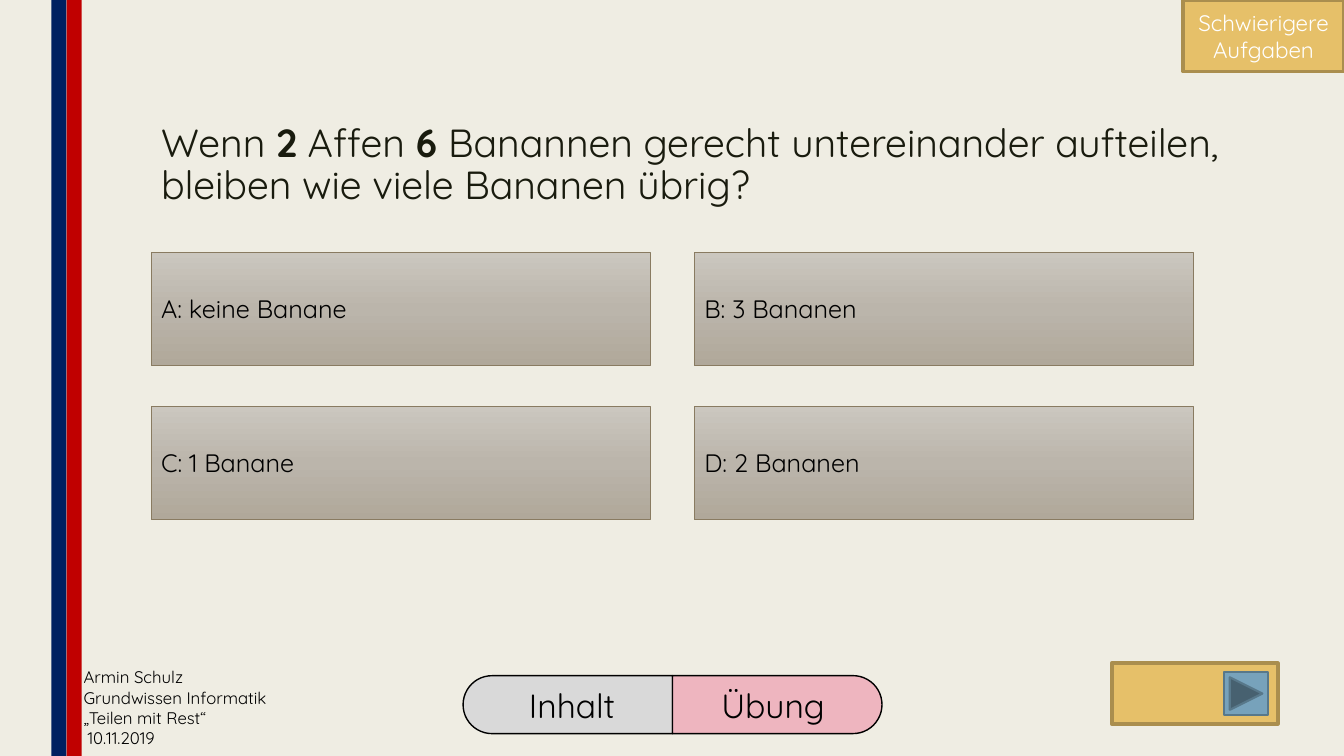
from copy import deepcopy

from pptx import Presentation
from pptx.dml.color import RGBColor
from pptx.enum.shapes import MSO_SHAPE as Preset
from pptx.enum.text import MSO_ANCHOR as Anchor, PP_ALIGN as Align
from pptx.util import Pt

FONT = "Quicksand"
COLORS = {
    "background": "EFEDE3",
    "navy": "002060",
    "red": "C00000",
    "pink": "EEB5BF",
    "grey": "D9D9D9",
    "gold": "E6C069",
    "gold_line": "AA8E4E",
    "blue": "77A2BB",
    "blue_line": "58788A",
    "answer_line": "897B61",
    "question": "191B0E",
    "black": "000000",
    "white": "FFFFFF",
}
ANSWER_GRADIENT = [(0, "CBC7BF"), (0.5, "BBB5AB"), (1, "B0A89A")]


def color(name):
    return RGBColor.from_string(COLORS[name])


def add_box(slide, preset, box, fill=None, line=None, line_width=1):
    shape = slide.shapes.add_shape(preset, *map(Pt, box))
    shape.shadow.inherit = False
    if fill:
        shape.fill.solid()
        shape.fill.fore_color.rgb = color(fill)
    if line:
        shape.line.color.rgb = color(line)
        shape.line.width = Pt(line_width)
    else:
        shape.line.fill.background()
    return shape


def format_run(run, size, color_name):
    run.font.name = FONT
    run.font.size = Pt(size)
    run.font.color.rgb = color(color_name)


def write(shape, text, size, color_name="black", align=Align.LEFT, anchor=Anchor.MIDDLE):
    text_frame = shape.text_frame
    text_frame.word_wrap = True
    text_frame.vertical_anchor = anchor
    text_frame.text = text
    for paragraph in text_frame.paragraphs:
        paragraph.alignment = align
        for run in paragraph.runs:
            format_run(run, size, color_name)


def add_stripes(slide, left, height, width=10.8):
    for index, name in enumerate(["navy", "red"]):
        add_box(slide, Preset.RECTANGLE, (left + index * width, 0, width, height), name)


def add_credits(slide, left, top, width):
    author = slide.shapes.add_textbox(Pt(left), Pt(top), Pt(width), Pt(51))
    write(author, "Armin Schulz\nGrundwissen Informatik\n„Teilen mit Rest“", 12, anchor=Anchor.TOP)
    date = slide.shapes.add_textbox(Pt(left + 2.9), Pt(top + 43.2), Pt(width), Pt(16))
    write(date, "10.11.2019", 12, anchor=Anchor.TOP)


def add_navigation(slide, left, top, width, height):
    tab_width = width / 2
    tabs = [("Inhalt", "grey", 270, "vert"), ("Übung", "pink", 90, "vert270")]
    for index, (label, fill, rotation, direction) in enumerate(tabs):
        center_x = left + (index + 0.5) * tab_width
        center_y = top + height / 2
        box = (center_x - height / 2, center_y - tab_width / 2, height, tab_width)
        tab = add_box(slide, Preset.ROUND_2_SAME_RECTANGLE, box, fill, "black")
        tab.adjustments[0] = 0.5
        tab.adjustments[1] = 0
        tab.rotation = rotation
        write(tab, label, 24, align=Align.CENTER)
        tab.text_frame._txBody.bodyPr.set("vert", direction)


def add_question(slide, left, top, width, height, parts):
    title = slide.shapes.add_textbox(Pt(left), Pt(top), Pt(width), Pt(height))
    title.text_frame.word_wrap = True
    paragraph = title.text_frame.paragraphs[0]
    paragraph.line_spacing = 0.89
    for text, bold in parts:
        run = paragraph.add_run()
        run.text = text
        format_run(run, 28, "question")
        run.font.bold = bold


def fill_gradient(shape):
    shape.fill.gradient()
    shape.fill.gradient_angle = 270
    stop_list = shape.fill._fill._gradFill.gsLst
    stop_list.insert(1, deepcopy(stop_list[0]))
    for stop, (position, value) in zip(shape.fill.gradient_stops, ANSWER_GRADIENT):
        stop.position = position
        stop.color.rgb = RGBColor.from_string(value)


def add_answers(slide, left, top, width, height, answers):
    gap_x, gap_y = 31.7, 28.8
    card_width = (width - gap_x) / 2
    card_height = (height - gap_y) / 2
    for index, answer in enumerate(answers):
        row, column = divmod(index, 2)
        box = (
            left + column * (card_width + gap_x),
            top + row * (card_height + gap_y),
            card_width,
            card_height,
        )
        card = add_box(slide, Preset.RECTANGLE, box, line="answer_line", line_width=0.5)
        fill_gradient(card)
        write(card, answer, 18)


def add_next_button(slide, left, top, width, height):
    add_box(slide, Preset.RECTANGLE, (left, top, width, height), "gold", "gold_line", 2.75)
    size = 31
    icon_box = (left + width - size - 7.2, top + (height - size) / 2, size, size)
    add_box(slide, Preset.ACTION_BUTTON_FORWARD_OR_NEXT, icon_box, "blue", "blue_line", 1.5)


def add_level_badge(slide, left, top, width, height):
    badge = add_box(slide, Preset.RECTANGLE, (left, top, width, height), "gold", "gold_line", 2.75)
    write(badge, "Schwierigere\nAufgaben", 16, "white", Align.CENTER)


def main():
    presentation = Presentation()
    presentation.slide_width = Pt(960)
    presentation.slide_height = Pt(540)
    slide = presentation.slides.add_slide(presentation.slide_layouts[6])
    slide.background.fill.solid()
    slide.background.fill.fore_color.rgb = color("background")

    add_stripes(slide, 36.7, 540)
    add_credits(slide, 52.6, 473, 157)
    add_navigation(slide, 330.8, 482.6, 299.2, 41.4)
    add_question(slide, 108, 85, 833.8, 76.3, [
        ("Wenn ", False),
        ("2", True),
        (" Affen ", False),
        ("6 ", True),
        ("Banannen gerecht untereinander aufteilen, bleiben wie viele Bananen übrig?", False),
    ])
    add_answers(slide, 108, 180, 744.3, 191.2, [
        "A: keine Banane",
        "B: 3 Bananen",
        "C: 1 Banane",
        "D: 2 Bananen",
    ])
    add_next_button(slide, 794, 473.8, 118.8, 43.2)
    add_level_badge(slide, 845, 0, 115, 51.1)
    presentation.save("out.pptx")


if __name__ == "__main__":
    main()
